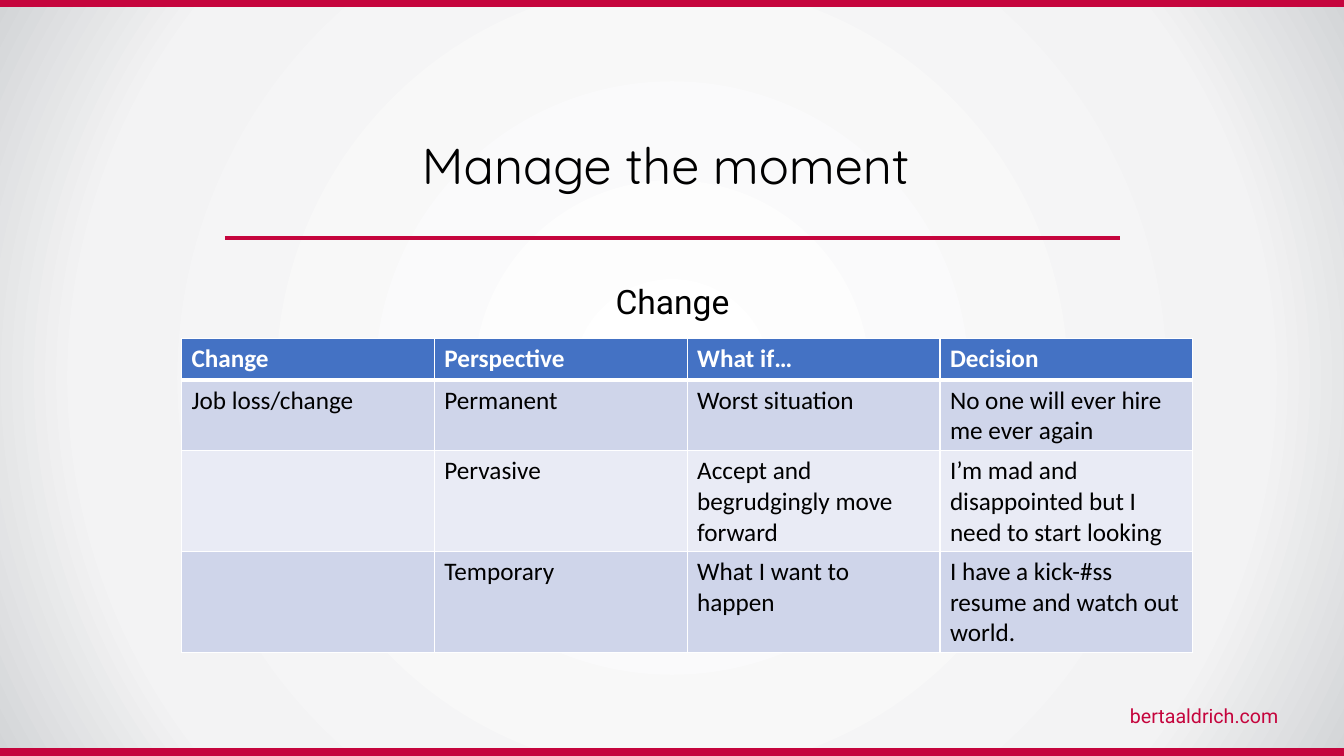
from dataclasses import dataclass

from lxml.etree import SubElement
from pptx import Presentation
from pptx.dml.color import RGBColor
from pptx.enum.shapes import MSO_CONNECTOR as Connector, MSO_SHAPE as Shape
from pptx.enum.text import PP_ALIGN as Align
from pptx.oxml import parse_xml
from pptx.oxml.ns import nsdecls, qn
from pptx.util import Inches, Pt


@dataclass(frozen=True)
class Theme:
    accent: str = "C5053D"
    ink: str = "000000"
    white: str = "FFFFFF"
    header: str = "4472C4"
    bands: tuple = ("CFD5EA", "E9EBF5")
    backdrop: tuple = ((0, "FFFFFF"), (77, "F3F3F4"), (100, "D3D5D7"))
    title_font: str = "Quicksand"
    text_font: str = "Roboto"
    table_font: str = "Calibri"
    title_size: int = 36
    subtitle_size: int = 24
    table_size: int = 18
    footer_size: int = 14


def write_text(frame, text, font, size, color, bold=False, align=Align.LEFT, line_spacing=None):
    frame.word_wrap = True
    paragraph = frame.paragraphs[0]
    paragraph.alignment = align
    paragraph.line_spacing = line_spacing
    run = paragraph.add_run()
    run.text = text
    run.font.name = font
    run.font.size = Pt(size)
    run.font.bold = bold
    run.font.color.rgb = RGBColor.from_string(color)


class SlideBuilder:
    def __init__(self, slide, theme):
        self.slide = slide
        self.theme = theme

    def background(self):
        fill = self.slide.background.fill
        fill.gradient()
        stops = "".join(
            f'<a:gs pos="{position * 1000}"><a:srgbClr val="{color}"/></a:gs>'
            for position, color in self.theme.backdrop
        )
        gradient = parse_xml(
            f'<a:gradFill {nsdecls("a")} rotWithShape="1"><a:gsLst>{stops}</a:gsLst>'
            '<a:path path="circle"><a:fillToRect l="50000" t="50000" r="50000" b="50000"/>'
            "</a:path></a:gradFill>"
        )
        current = self.slide.background._cSld.find(".//" + qn("a:gradFill"))
        current.getparent().replace(current, gradient)

    def bar(self, left, top, width, height):
        shape = self.slide.shapes.add_shape(
            Shape.RECTANGLE, Inches(left), Inches(top), Inches(width), Inches(height)
        )
        shape.shadow.inherit = False
        color = RGBColor.from_string(self.theme.accent)
        shape.fill.solid()
        shape.fill.fore_color.rgb = color
        shape.line.color.rgb = color
        shape.line.width = Pt(1)

    def text(self, text, left, top, width, height, **style):
        box = self.slide.shapes.add_textbox(
            Inches(left), Inches(top), Inches(width), Inches(height)
        )
        write_text(box.text_frame, text, **style)

    def rule(self, left, right, top, weight):
        line = self.slide.shapes.add_connector(
            Connector.STRAIGHT, Inches(left), Inches(top), Inches(right), Inches(top)
        )
        line.line.color.rgb = RGBColor.from_string(self.theme.accent)
        line.line.width = Pt(weight)
        SubElement(line._element.spPr, qn("a:effectLst"))

    def cell_borders(self, cell, top, bottom):
        properties = cell._tc.get_or_add_tcPr()
        for index, (side, weight) in enumerate(zip("LRTB", (1, 1, top, bottom))):
            border = parse_xml(
                f'<a:ln{side} {nsdecls("a")} w="{Pt(weight)}"><a:solidFill>'
                f'<a:srgbClr val="{self.theme.white}"/></a:solidFill></a:ln{side}>'
            )
            properties.insert(index, border)

    def table(self, rows, left, top, width, heights):
        theme = self.theme
        table = self.slide.shapes.add_table(
            len(rows), len(rows[0]), Inches(left), Inches(top), Inches(width), Inches(sum(heights))
        ).table
        for row_index, (row, height) in enumerate(zip(rows, heights)):
            table.rows[row_index].height = Inches(height)
            is_header = row_index == 0
            fill = theme.header if is_header else theme.bands[(row_index - 1) % 2]
            for column_index, text in enumerate(row):
                cell = table.cell(row_index, column_index)
                cell.fill.solid()
                cell.fill.fore_color.rgb = RGBColor.from_string(fill)
                self.cell_borders(cell, 3 if row_index == 1 else 1, 3 if is_header else 1)
                if text:
                    write_text(
                        cell.text_frame, text, theme.table_font, theme.table_size,
                        theme.white if is_header else theme.ink, bold=is_header,
                    )


def main():
    theme = Theme()
    presentation = Presentation()
    presentation.slide_width = Inches(13.33)
    presentation.slide_height = Inches(7.5)
    builder = SlideBuilder(presentation.slides.add_slide(presentation.slide_layouts[6]), theme)

    builder.background()
    for top in (7.43, -0.01):
        builder.bar(0, top, 13.33, 0.07)
    builder.text(
        "bertaaldrich.com", 9.5, 6.93, 3.28, 0.34,
        font=theme.text_font, size=theme.footer_size, color=theme.accent, align=Align.RIGHT,
    )
    builder.text(
        "Manage the moment ", 2.23, 1.35, 8.88, 0.59, font=theme.title_font,
        size=theme.title_size, color=theme.ink, align=Align.CENTER, line_spacing=0.9,
    )
    builder.text(
        "Change", 0.92, 2.78, 11.5, 3.13, font=theme.text_font,
        size=theme.subtitle_size, color=theme.ink, align=Align.CENTER, line_spacing=0.9,
    )
    builder.rule(2.23, 11.11, 2.36, 3)
    rows = [
        ("Change", "Perspective", "What if…", "Decision"),
        ("Job loss/change", "Permanent", "Worst situation", "No one will ever hire me ever again"),
        ("", "Pervasive", "Accept and begrudgingly move forward",
         "I’m mad and disappointed but I need to start looking"),
        ("", "Temporary", "What I want to happen",
         "I have a kick-#ss resume and watch out world."),
    ]
    builder.table(rows, 1.8, 3.36, 10.03, (0.41, 0.7, 1, 1))
    presentation.save("out.pptx")


if __name__ == "__main__":
    main()
